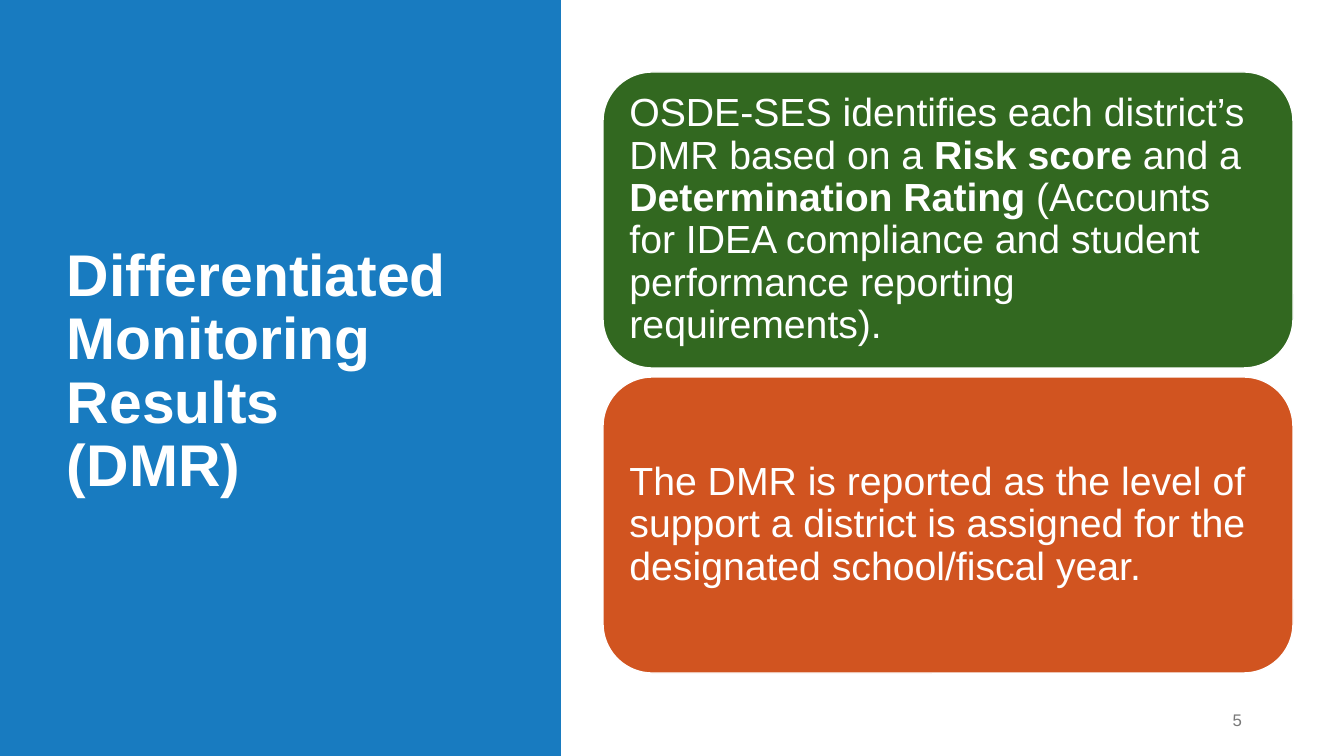
import dataclasses

import pptx
import pptx.dml.color
import pptx.enum.shapes
import pptx.enum.text
import pptx.util


@dataclasses.dataclass(frozen=True)
class Theme:
    font: str = "Arial"
    blue: str = "187BC0"
    green: str = "326820"
    orange: str = "D15420"
    white: str = "FFFFFF"
    grey: str = "787878"
    title_size: int = 42
    body_size: int = 28
    number_size: int = 12
    line_spacing: float = 0.9


class SlideBuilder:
    EMU_PER_PX = 914400 / 100.8

    def __init__(self, slide, theme):
        self.slide = slide
        self.theme = theme

    @classmethod
    def px(cls, value):
        return pptx.util.Emu(round(value * cls.EMU_PER_PX))

    @staticmethod
    def rgb(color):
        return pptx.dml.color.RGBColor.from_string(color)

    def box(self, bounds, fill, rounded=False):
        kinds = pptx.enum.shapes.MSO_SHAPE
        kind = kinds.ROUNDED_RECTANGLE if rounded else kinds.RECTANGLE
        sp = self.slide.shapes.add_shape(kind, *map(self.px, bounds))
        sp.shadow.inherit = False
        sp.fill.solid()
        sp.fill.fore_color.rgb = self.rgb(fill)
        sp.line.fill.background()
        return sp

    def set_text(self, sp, runs, size, color, align="LEFT", inset=10):
        tf = sp.text_frame
        tf.word_wrap = True
        tf.vertical_anchor = pptx.enum.text.MSO_ANCHOR.MIDDLE
        tf.margin_left = tf.margin_right = self.px(inset)
        tf.margin_top = tf.margin_bottom = self.px(inset)
        p = tf.paragraphs[0]
        p.alignment = pptx.enum.text.PP_ALIGN[align]
        p.line_spacing = self.theme.line_spacing
        for text, bold in runs:
            r = p.add_run()
            r.text = text
            r.font.name = self.theme.font
            r.font.size = pptx.util.Pt(size)
            r.font.bold = bold
            r.font.color.rgb = self.rgb(color)

    def text(self, bounds, runs, size, color, align="LEFT"):
        sp = self.slide.shapes.add_textbox(*map(self.px, bounds))
        self.set_text(sp, runs, size, color, align)

    def card(self, bounds, fill, runs):
        sp = self.box(bounds, fill, rounded=True)
        sp.line.color.rgb = self.rgb(self.theme.white)
        sp.line.width = pptx.util.Pt(1)
        self.set_text(sp, runs, self.theme.body_size, self.theme.white, inset=12)


def main():
    theme = Theme()
    prs = pptx.Presentation()
    prs.slide_width = SlideBuilder.px(1344)
    prs.slide_height = SlideBuilder.px(756)
    s = SlideBuilder(prs.slides.add_slide(prs.slide_layouts[6]), theme)

    s.box((0, 0, 561, 756), theme.blue)
    title = [("Differentiated Monitoring Results (DMR)", True)]
    s.text((57, 69, 416, 607), title, theme.title_size, theme.white)
    s.text((950, 701, 302, 40), [("5", False)], theme.number_size, theme.grey, "RIGHT")

    cards = [
        (theme.green, [
            ("OSDE-SES identifies each district’s DMR based on a ", False),
            ("Risk score", True),
            (" and a ", False),
            ("Determination Rating", True),
            (" (Accounts for IDEA compliance and student performance "
             "reporting requirements).", False),
        ]),
        (theme.orange, [
            ("The DMR is reported as the level of support a district is "
             "assigned for the designated school/fiscal year.", False),
        ]),
    ]
    top, height, gap = 72, 296, 9
    for i, (fill, runs) in enumerate(cards):
        s.card((603, top + i * (height + gap), 690, height), fill, runs)

    prs.save("out.pptx")


if __name__ == "__main__":
    main()
